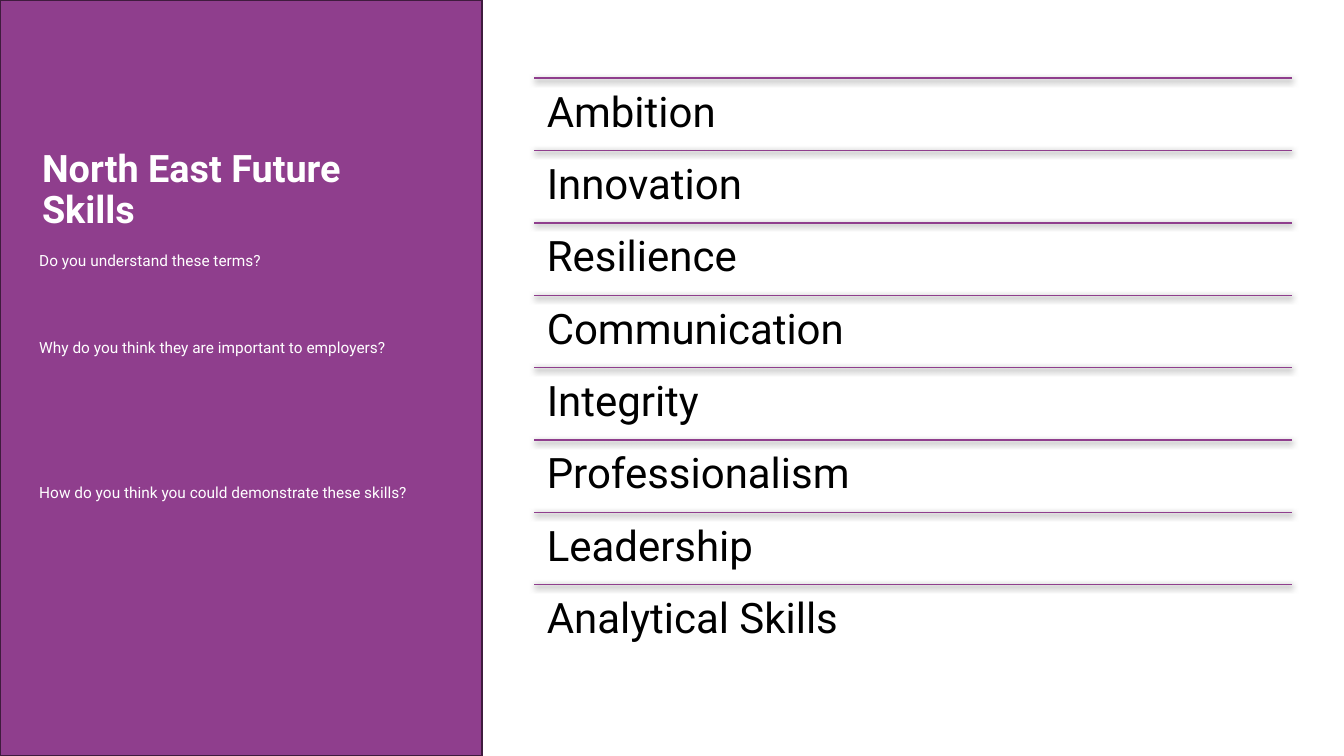
from lxml.etree import SubElement
from pptx import Presentation
from pptx.dml.color import RGBColor
from pptx.enum.shapes import MSO_CONNECTOR, MSO_SHAPE
from pptx.enum.text import MSO_ANCHOR
from pptx.oxml.ns import qn
from pptx.util import Cm, Pt

HUES = {
    "plum": "8F3E8D",
    "edge": "3F1B3E",
    "white": "FFFFFF",
    "black": "000000",
}
ASKS = [
    ("Do you understand these terms?", 0),
    ("Why do you think they are important to employers?", 50.5),
    ("How do you think you could demonstrate these skills?", 91.3),
]
SKILLS = [
    "Ambition", "Innovation", "Resilience", "Communication",
    "Integrity", "Professionalism", "Leadership", "Analytical Skills",
]


def hue(name):
    return RGBColor.from_string(HUES[name])


class Page:
    font = "Roboto"

    def __init__(self, slide):
        self.shapes = slide.shapes

    def panel(self, x, y, w, h):
        box = self.shapes.add_shape(MSO_SHAPE.RECTANGLE, Cm(x), Cm(y), Cm(w), Cm(h))
        box.shadow.inherit = False
        box.fill.solid()
        box.fill.fore_color.rgb = hue("plum")
        box.line.color.rgb = hue("edge")
        box.line.width = Pt(1.5)

    def text(self, x, y, w, h, lines, size, color, bold=False, pad=None,
             anchor=MSO_ANCHOR.TOP):
        """Add a text box; lines holds pairs of wording and space before."""
        frame = self.shapes.add_textbox(Cm(x), Cm(y), Cm(w), Cm(h)).text_frame
        frame.word_wrap = True
        frame.vertical_anchor = anchor
        if pad is not None:
            frame.margin_left = frame.margin_right = Cm(pad)
            frame.margin_top = frame.margin_bottom = Cm(pad)
        for i, (words, gap) in enumerate(lines):
            para = frame.add_paragraph() if i else frame.paragraphs[0]
            para.text = words
            para.line_spacing = 0.9
            para.space_before = Pt(gap)
            para.font.name = self.font
            para.font.size = Pt(size)
            para.font.bold = bold
            para.font.color.rgb = hue(color)

    def rule(self, x, y, w):
        """Add a level line with a soft shadow below it."""
        line = self.shapes.add_connector(
            MSO_CONNECTOR.STRAIGHT, Cm(x), Cm(y), Cm(x + w), Cm(y))
        line.line.color.rgb = hue("plum")
        line.line.width = Pt(1)
        effects = SubElement(line._element.spPr, qn("a:effectLst"))
        shade = SubElement(
            effects, qn("a:outerShdw"), blurRad=str(Pt(4.5)), dist=str(Pt(1.5)),
            dir="5400000", algn="ctr", rotWithShape="0")
        tint = SubElement(shade, qn("a:srgbClr"), val=HUES["black"])
        SubElement(tint, qn("a:alpha"), val="63000")


def main():
    deck = Presentation()
    deck.slide_width, deck.slide_height = Cm(33.87), Cm(19.05)
    page = Page(deck.slides.add_slide(deck.slide_layouts[6]))

    page.panel(0, 0, 12.14, 19.05)
    page.text(0.81, 3.89, 10.44, 1.83, [("North East Future Skills", 0)], 27,
              "white", bold=True, anchor=MSO_ANCHOR.MIDDLE)
    page.text(0.74, 6.25, 10.44, 4.95, ASKS, 11, "white")

    left, top, width, height = 13.46, 1.97, 19.1, 14.59
    step = height / len(SKILLS)
    for i, skill in enumerate(SKILLS):
        y = top + i * step
        page.rule(left, y, width)
        page.text(left, y, width, step, [(skill, 0)], 30, "black", pad=0.32)

    deck.save("out.pptx")


if __name__ == "__main__":
    main()
